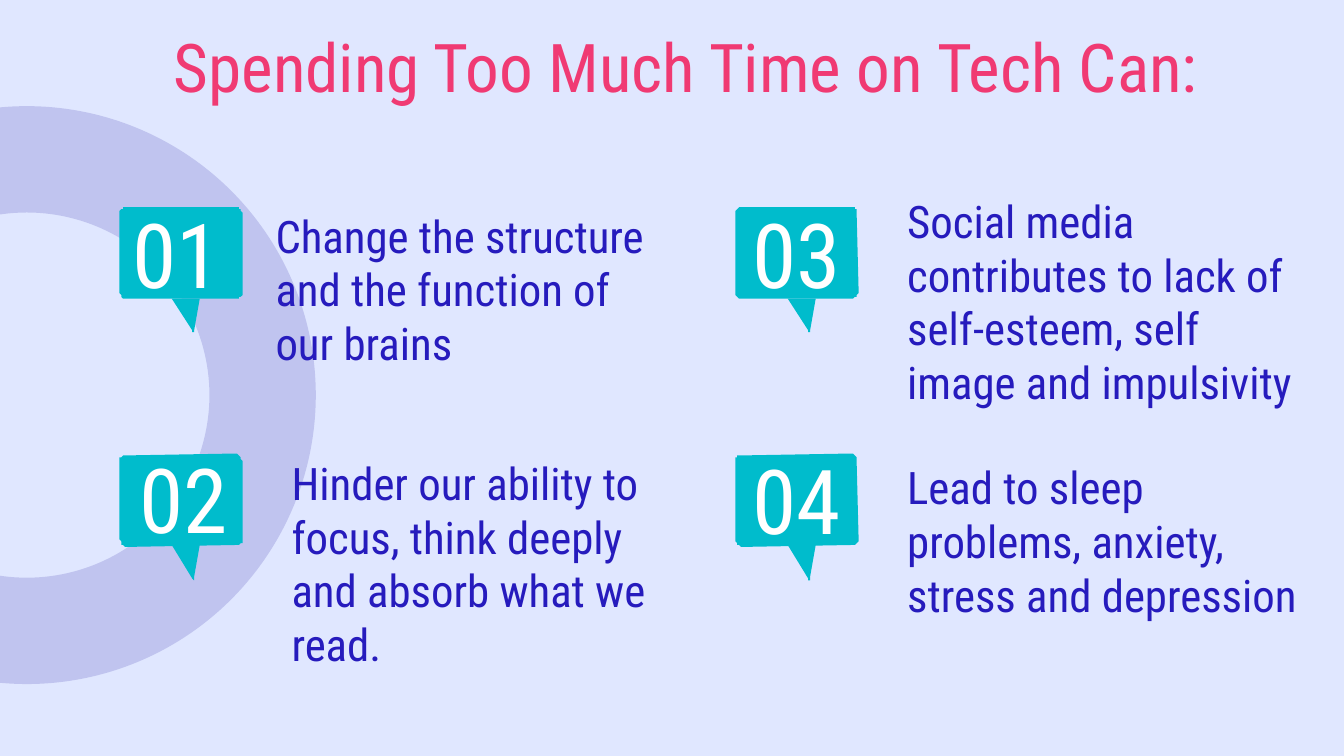
from dataclasses import dataclass

from pptx import Presentation
from pptx.dml.color import RGBColor as RGB
from pptx.enum.shapes import MSO_SHAPE as SHAPE
from pptx.enum.text import MSO_ANCHOR as ANCHOR, MSO_AUTO_SIZE as AUTO, PP_ALIGN as ALIGN
from pptx.oxml.ns import qn
from pptx.oxml.xmlchemy import OxmlElement
from pptx.util import Pt


@dataclass(frozen=True)
class Theme:
    font: str = "Roboto Condensed"
    background: RGB = RGB(0xE0, 0xE7, 0xFF)
    ring: RGB = RGB(0x1B, 0x12, 0x9C)
    bubble: RGB = RGB(0x00, 0xBC, 0xCC)
    title: RGB = RGB(0xF0, 0x3A, 0x73)
    body: RGB = RGB(0x26, 0x1B, 0xBD)
    number: RGB = RGB(0xFF, 0xFF, 0xFF)
    title_size: int = 36
    body_size: int = 24
    number_size: int = 48


THEME = Theme()

# Bubble grid: first corner and steps
LEFT, TOP = 63.8, 110.7
COL_STEP, ROW_STEP = 329.8, 132.5

# Bubble outlines: x, y, corner radius, relative to the grid position
BUBBLE_BODY = [(0, 0.4, 4.5), (0.5, 49.6, 4.5), (66.4, 49.2, 4.5), (65.8, 0, 4.5)]
BUBBLE_TAIL = [(28.4, 49, 0), (40.2, 68.5, 2.5), (43.5, 49, 0)]

# Number, column, row, number box, text, text box
REASONS = [
    ("01", 0, 0, (61.9, 126, 65.5, 18.7),
     "Change the structure and the function of our brains", (140.4, 114.5, 220.3, 90.7)),
    ("02", 0, 1, (65.5, 247, 65.5, 39.6),
     "Hinder our ability to focus, think deeply and absorb what we read.",
     (149, 251.3, 220.3, 115.2)),
    ("03", 1, 0, (393.8, 126, 65.5, 18.7),
     "Social media contributes to lack of self-esteem, self image and impulsivity",
     (478.8, 103.7, 232.6, 122.4)),
    ("04", 1, 1, (393.8, 257.8, 65.5, 18.7),
     "Lead to sleep problems, anxiety, stress and depression",
     (478.8, 257.8, 227.5, 82.1)),
]


def write_text(sp, text, size, color, align, anchor):
    """Fill a text box or placeholder with one formatted paragraph."""
    tf = sp.text_frame
    tf.word_wrap = True
    tf.auto_size = AUTO.NONE
    tf.vertical_anchor = anchor
    tf.margin_left = tf.margin_right = tf.margin_top = tf.margin_bottom = Pt(7.2)
    p = tf.paragraphs[0]
    p.alignment = align
    p.line_spacing = 1.0
    p.space_before = p.space_after = Pt(0)
    r = p.add_run()
    r.text = text
    font = r.font
    font.name, font.size, font.bold = THEME.font, Pt(size), False
    font.color.rgb = color
    return p


def place(sp, box):
    sp.left, sp.top, sp.width, sp.height = map(Pt, box)


def add_title(s, text, box):
    sp = s.shapes.title
    place(sp, box)
    write_text(sp, text, THEME.title_size, THEME.title, ALIGN.CENTER, ANCHOR.TOP)


def add_body(sp, text, box):
    place(sp, box)
    p = write_text(sp, text, THEME.body_size, THEME.body, ALIGN.LEFT, ANCHOR.BOTTOM)
    # No bullet and no hanging indent
    pPr = p._p.get_or_add_pPr()
    pPr.set("marL", "0")
    pPr.set("indent", "0")
    pPr.append(OxmlElement("a:buNone"))


def add_number(s, text, box):
    sp = s.shapes.add_textbox(*map(Pt, box))
    write_text(sp, text, THEME.number_size, THEME.number, ALIGN.CENTER, ANCHOR.MIDDLE)


def paint(sp, color):
    sp.shadow.inherit = False
    sp.fill.solid()
    sp.fill.fore_color.rgb = color
    sp.line.fill.background()


def add_ring(s):
    """Translucent ring behind everything else."""
    sp = s.shapes.add_shape(SHAPE.DONUT, Pt(-140.4), Pt(56.9), Pt(309.6), Pt(309.6))
    sp.adjustments[0] = 0.184
    paint(sp, THEME.ring)
    alpha = OxmlElement("a:alpha")
    alpha.set("val", "16000")
    next(sp.element.iter(qn("a:srgbClr"))).append(alpha)
    sp.element.getparent().insert(2, sp.element)


def toward(start, end, distance):
    dx, dy = end[0] - start[0], end[1] - start[1]
    t = distance / (dx * dx + dy * dy) ** 0.5
    return start[0] + dx * t, start[1] + dy * t


def rounded(corners, steps=8):
    """Points of a polygon whose corners are quadratic curves."""
    points = []
    for i, corner in enumerate(corners):
        x, y, radius = corner
        if not radius:
            points.append((x, y))
            continue
        a = toward(corner, corners[i - 1], radius)
        b = toward(corner, corners[(i + 1) % len(corners)], radius)
        for t in (k / steps for k in range(steps + 1)):
            u = 1 - t
            points.append(tuple(u * u * a[n] + 2 * u * t * corner[n] + t * t * b[n]
                                for n in (0, 1)))
    return points


def add_bubble(s, x, y):
    group = s.shapes.add_group_shape()
    for corners in (BUBBLE_BODY, BUBBLE_TAIL):
        points = [(x + px, y + py) for px, py in rounded(corners)]
        outline = group.shapes.build_freeform(*points[0], scale=Pt(1))
        outline.add_line_segments(points[1:], close=True)
        paint(outline.convert_to_shape(), THEME.bubble)


def main():
    prs = Presentation()
    prs.slide_width, prs.slide_height = Pt(720), Pt(405)
    # The comparison layout holds a title and four bodies
    s = prs.slides.add_slide(prs.slide_layouts[4])

    # Background
    s.background.fill.solid()
    s.background.fill.fore_color.rgb = THEME.background
    add_ring(s)

    # Title
    add_title(s, "Spending Too Much Time on Tech Can:", (24.5, 6.5, 686.2, 82.1))

    # Numbered reasons
    bodies = [sp for sp in s.placeholders if sp.placeholder_format.idx > 0]
    for sp, (number, col, row, number_box, text, text_box) in zip(bodies, REASONS):
        add_bubble(s, LEFT + col * COL_STEP, TOP + row * ROW_STEP)
        add_number(s, number, number_box)
        add_body(sp, text, text_box)

    prs.save("out.pptx")


if __name__ == "__main__":
    main()
